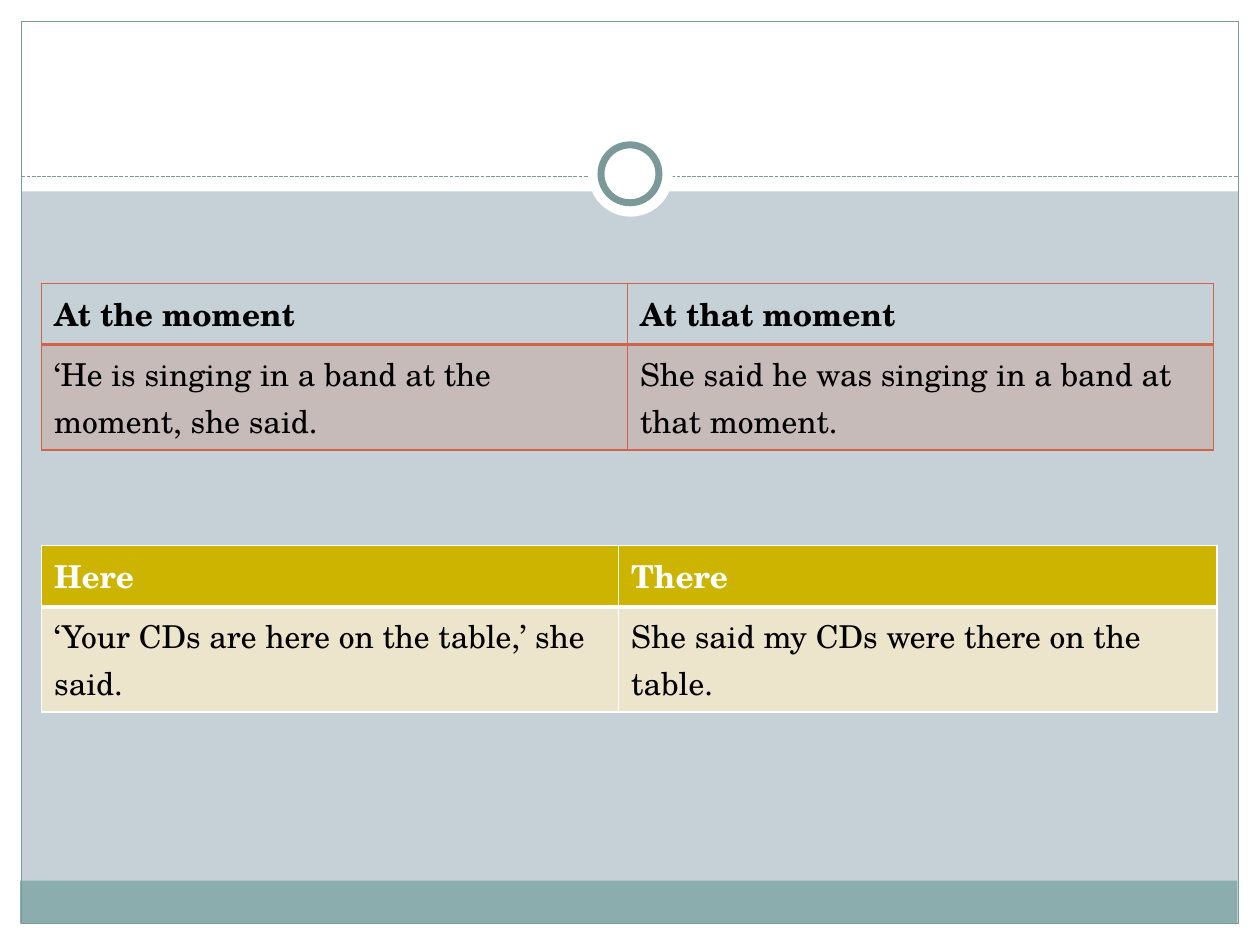
"""Build a slide with two tables of time and place changes in reported speech."""
from dataclasses import dataclass

from lxml.etree import SubElement
from pptx import Presentation
from pptx.dml.color import RGBColor
from pptx.enum.dml import MSO_LINE
from pptx.enum.shapes import MSO_CONNECTOR, MSO_SHAPE
from pptx.oxml import parse_xml
from pptx.oxml.ns import nsdecls, qn
from pptx.util import Inches, Pt


@dataclass(frozen=True)
class Theme:
    backdrop: str = "C5D1D7"
    white: str = "FFFFFF"
    black: str = "000000"
    teal: str = "7C999A"
    footer: str = "8CADAE"
    coral: str = "D16349"
    mustard: str = "CCB400"
    cream: str = "ECE5CC"
    font: str = "TeX Gyre Schola"
    text_size: int = 18


def add_part(slide, kind, box, fill=None, line=None, weight=0.75):
    part = slide.shapes.add_shape(kind, *map(Inches, box))
    part.shadow.inherit = False
    if fill:
        part.fill.solid()
        part.fill.fore_color.rgb = RGBColor.from_string(fill)
    else:
        part.fill.background()
    if line:
        part.line.color.rgb = RGBColor.from_string(line)
        part.line.width = Pt(weight)
    else:
        part.line.fill.background()


def style_cell(cell, fill, opacity, border, weights):
    if fill:
        cell.fill.solid()
        cell.fill.fore_color.rgb = RGBColor.from_string(fill)
    else:
        cell.fill.background()
    properties = cell._tc.get_or_add_tcPr()
    if opacity < 100:
        tint = properties.find(".//" + qn("a:srgbClr"))
        SubElement(tint, qn("a:alpha"), val=str(opacity * 1000))
    for position, (side, weight) in enumerate(zip("LRTB", weights)):
        edge = parse_xml(
            f'<a:ln{side} {nsdecls("a")} w="{Pt(weight)}"><a:solidFill>'
            f'<a:srgbClr val="{border}"/></a:solidFill></a:ln{side}>'
        )
        properties.insert(position, edge)


theme = Theme()
deck = Presentation()
deck.slide_width, deck.slide_height = Inches(10), Inches(7.5)
slide = deck.slides.add_slide(deck.slide_layouts[6])
slide.background.fill.solid()
slide.background.fill.fore_color.rgb = RGBColor.from_string(theme.backdrop)

margins = [(0, 7.33, 10, 0.17), (0, 0, 10, 1.52), (0, 0, 0.17, 7.5), (9.83, 0, 0.17, 7.5)]
for margin in margins:
    add_part(slide, MSO_SHAPE.RECTANGLE, margin, theme.white)
add_part(slide, MSO_SHAPE.RECTANGLE, (0.16, 6.99, 9.66, 0.34), theme.footer)
add_part(slide, MSO_SHAPE.RECTANGLE, (0.17, 0.17, 9.66, 7.16), line=theme.teal)

divider = slide.shapes.add_connector(
    MSO_CONNECTOR.STRAIGHT, Inches(0.17), Inches(1.4), Inches(9.83), Inches(1.4)
)
divider.line.color.rgb = RGBColor.from_string(theme.teal)
divider.line.width = Pt(0.75)
divider.line.dash_style = MSO_LINE.SQUARE_DOT
SubElement(divider._element.spPr, qn("a:effectLst"))

add_part(slide, MSO_SHAPE.OVAL, (4.67, 1.05, 0.67, 0.67), theme.white)
add_part(slide, MSO_SHAPE.OVAL, (4.77, 1.15, 0.46, 0.46), theme.white, theme.teal, 4)

comparisons = [
    {
        "top": 2.25, "columns": (4.65, 4.65), "border": theme.coral, "rule": 2,
        "fills": (None, theme.coral), "opacities": (100, 20),
        "inks": (theme.black, theme.black),
        "rows": [
            ("At the moment", "At that moment"),
            ("‘He is singing in a band at the moment, she said.",
             "She said he was singing in a band at that moment."),
        ],
    },
    {
        "top": 4.33, "columns": (4.58, 4.75), "border": theme.white, "rule": 3,
        "fills": (theme.mustard, theme.cream), "opacities": (100, 100),
        "inks": (theme.white, theme.black),
        "rows": [
            ("Here", "There"),
            ("‘Your CDs are here on the table,’ she said.",
             "She said my CDs were there on the table."),
        ],
    },
]

for comparison in comparisons:
    frame = slide.shapes.add_table(
        2, 2, Inches(0.33), Inches(comparison["top"]),
        Inches(sum(comparison["columns"])), Inches(1.11),
    )
    grid = frame.table
    grid.horz_banding = False
    for column, width in zip(grid.columns, comparison["columns"]):
        column.width = Inches(width)
    rule = comparison["rule"]
    edge_weights = [(1, 1, 1, rule), (1, 1, rule, 1)]
    for r, sentences in enumerate(comparison["rows"]):
        grid.rows[r].height = Inches(0.41)
        for c, sentence in enumerate(sentences):
            cell = grid.cell(r, c)
            style_cell(cell, comparison["fills"][r], comparison["opacities"][r],
                       comparison["border"], edge_weights[r])
            run = cell.text_frame.paragraphs[0].add_run()
            run.text = sentence
            run.font.name = theme.font
            run.font.size = Pt(theme.text_size)
            run.font.bold = r == 0
            run.font.color.rgb = RGBColor.from_string(comparison["inks"][r])
    frame.height = Inches(1.11)

deck.save("out.pptx")
